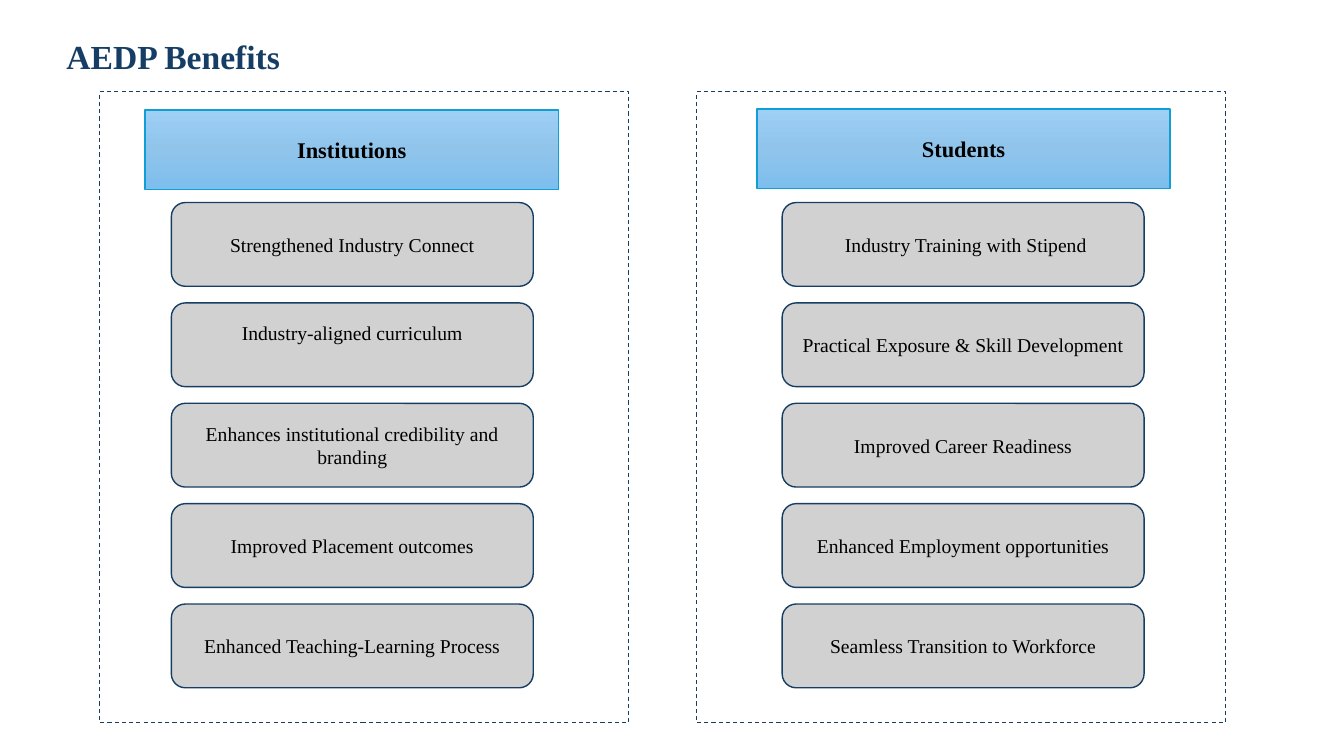
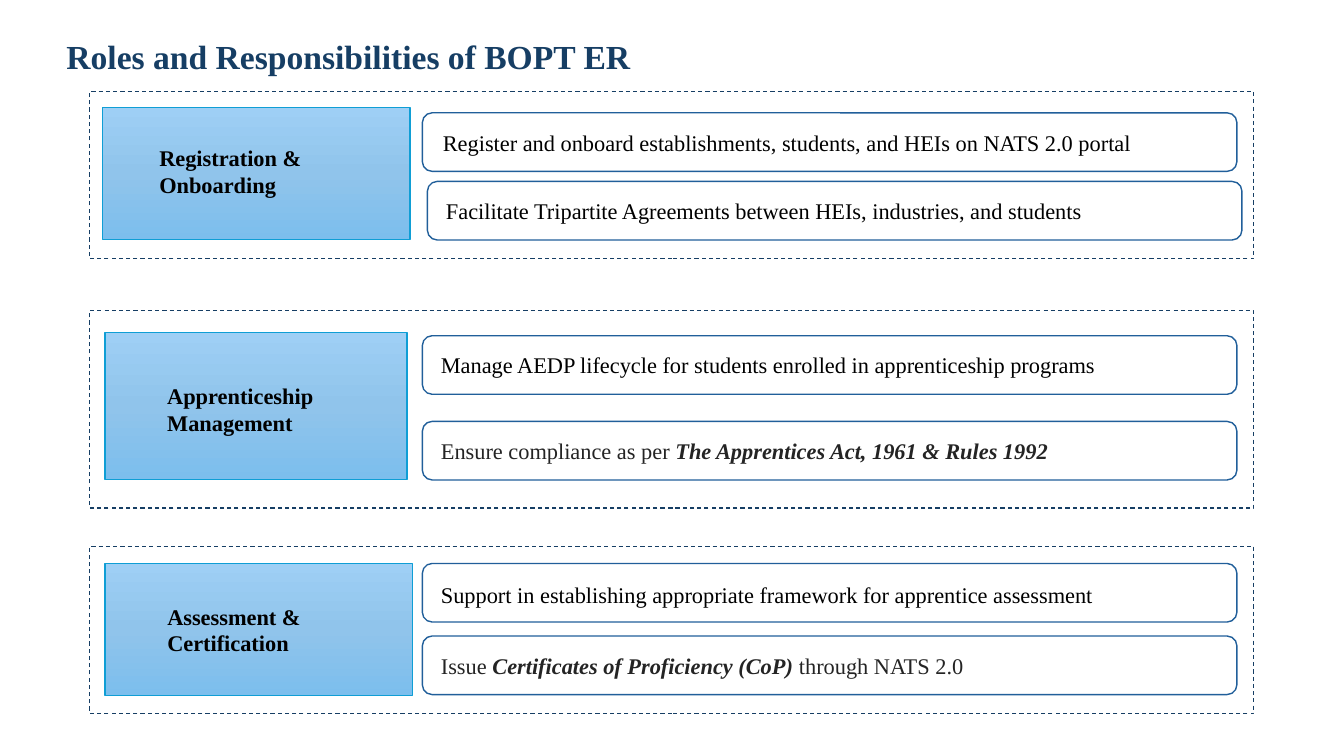
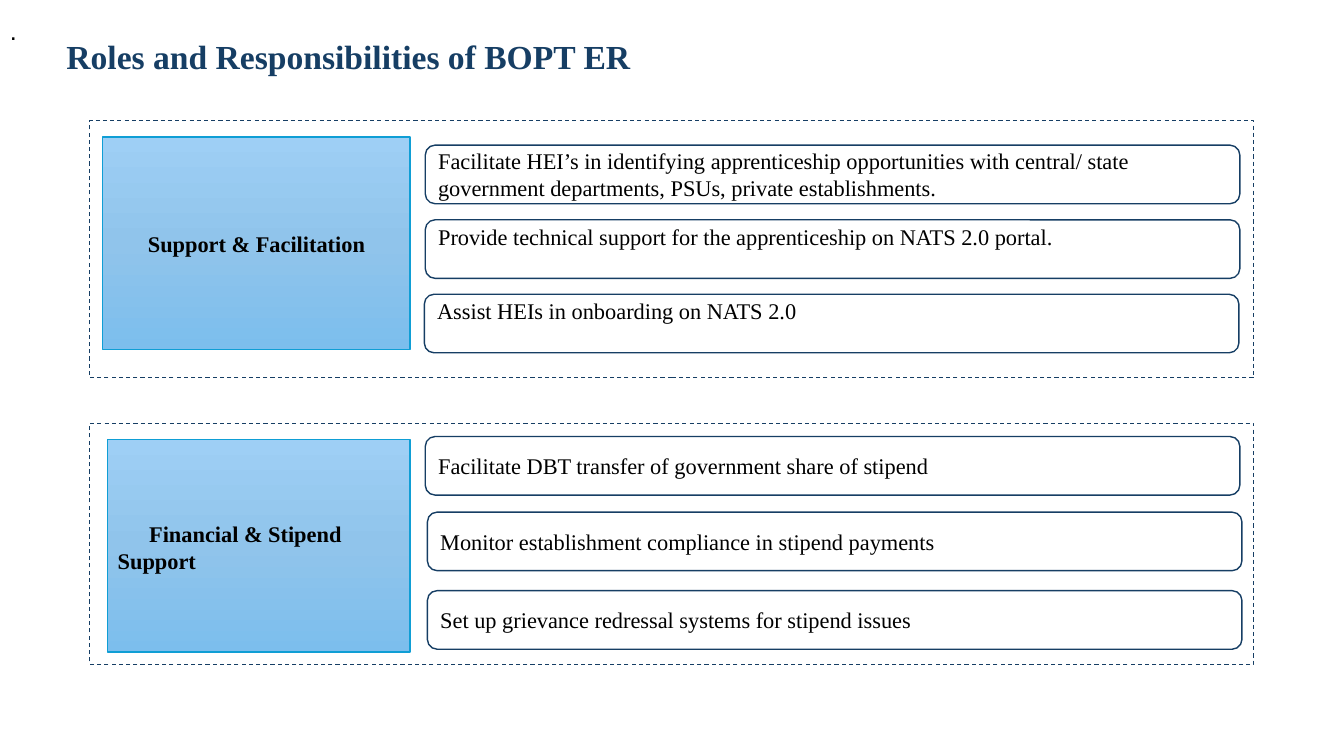
from copy import deepcopy
from dataclasses import dataclass

from pptx import Presentation
from pptx.dml.color import RGBColor
from pptx.enum.dml import MSO_LINE
from pptx.enum.shapes import MSO_SHAPE
from pptx.enum.text import MSO_ANCHOR, PP_ALIGN
from pptx.oxml.ns import qn
from pptx.util import Pt

RECT, ROUNDED = MSO_SHAPE.RECTANGLE, MSO_SHAPE.ROUNDED_RECTANGLE
LEFT, CENTER = PP_ALIGN.LEFT, PP_ALIGN.CENTER
TOP, MIDDLE = MSO_ANCHOR.TOP, MSO_ANCHOR.MIDDLE
DASH = MSO_LINE.DASH

COLORS = {
    "navy": "163E64",
    "blue": "215F9A",
    "cyan": "0F9ED5",
    "card": "D1D1D1",
    "black": "000000",
    "ink": "242424",
}
HEADER_STOPS = ((0, "9ECFF5"), (0.5, "90C4EB"), (1, "7CBEED"))
FONT = "Times New Roman"
INSET_X, INSET_Y = 7.2, 3.6

CARD_W, CARD_H = 258.5, 59.8
CARD_TOP, CARD_PITCH = 144.7, 71.7
ACTION_W, ACTION_H = 581.8, 41.8
PANEL_X, PANEL_W = 64.1, 831.6


@dataclass(frozen=True)
class Box:
    x: float
    y: float
    w: float
    h: float


@dataclass(frozen=True)
class Label:
    """Texts alternate between plain and emphasised; shift moves them down."""
    texts: tuple[str, ...]
    color: str = "black"
    left: float = INSET_X
    right: float = INSET_X
    shift: float = 0
    indent: float = 0
    align: PP_ALIGN = LEFT


@dataclass(frozen=True)
class Column:
    panel: Box
    header: Box
    heading: str
    card_x: float
    cards: tuple[Label, ...]


@dataclass(frozen=True)
class Action:
    x: float
    y: float
    label: Label


@dataclass(frozen=True)
class Section:
    panel_y: float
    panel_h: float
    header: Box
    heading: Label
    actions: tuple[Action, ...]


def card(text: str, **kw) -> Label:
    return Label((text,), align=CENTER, **kw)


def action(x: float, y: float, *texts: str, **kw) -> Action:
    return Action(x, y, Label(texts, **kw))


COLUMNS = (
    Column(Box(71.3, 65.5, 378, 450.7), Box(103.7, 78.5, 295.2, 56.9),
           "Institutions", 122.4, (
               card("Strengthened Industry Connect"),
               card("Industry-aligned curriculum", shift=-8.6),
               card("Enhances institutional credibility and branding"),
               card("Improved Placement outcomes"),
               card("Enhanced Teaching-Learning Process"))),
    Column(Box(497.5, 65.5, 378, 450.7), Box(540.7, 77.8, 295.2, 56.9),
           "Students", 558.7, (
               card("Industry Training with Stipend", left=11),
               card("Practical Exposure & Skill Development"),
               card("Improved Career Readiness"),
               card("Enhanced Employment opportunities"),
               card("Seamless Transition to Workforce"))),
)

ROLES = (
    Section(65.5, 119.5, Box(73.4, 77, 219.6, 94.3),
            Label(("Registration & Onboarding",), left=40.4, right=20, shift=-1.8), (
                action(301.7, 80.6, "Register and onboard establishments, students, "
                       "and HEIs on NATS 2.0 portal", left=12.6),
                action(305.3, 129.6, "Facilitate Tripartite Agreements between HEIs, "
                       "industries, and students", left=11.2))),
    Section(221.8, 141.1, Box(74.9, 237.6, 216, 105.1),
            Label(("Apprenticeship Management",), left=44.6, right=20, shift=2), (
                action(301.7, 239.8, "Manage AEDP lifecycle for students enrolled in "
                       "apprenticeship programs", left=11.2),
                action(301.7, 301, "Ensure compliance as per ",
                       "The Apprentices Act, 1961 & Rules 1992",
                       color="ink", left=11.2))),
    Section(390.2, 119.5, Box(74.9, 402.5, 219.6, 94.3),
            Label(("Assessment & Certification",), left=44.6, right=20), (
                action(301.7, 402.5, "Support in establishing appropriate framework for "
                       "apprentice assessment", left=11.2, shift=1.2),
                action(301.7, 454.3, "Issue ", "Certificates of Proficiency (CoP) ",
                       "through NATS 2.0", color="ink", left=11.2))),
)

SUPPORT_ROLES = (
    Section(86.4, 183.6, Box(73.4, 97.9, 219.6, 151.9),
            Label(("Support & Facilitation",), align=CENTER), (
                action(303.8, 103.7, "Facilitate HEI’s in identifying apprenticeship "
                       "opportunities with central/ state government departments, "
                       "PSUs, private establishments."),
                action(303.8, 157, "Provide technical support for the apprenticeship on "
                       "NATS 2.0 portal.", shift=-9.2),
                action(303.1, 210.2, "Assist HEIs in onboarding on NATS 2.0", shift=-9.2))),
    Section(302.4, 172.1, Box(77, 313.9, 216, 151.9),
            Label(("Financial & Stipend Support",), indent=22.5, shift=1), (
                action(303.8, 311.8, "Facilitate DBT transfer of government share of stipend"),
                action(305.3, 365.8, "Monitor establishment compliance in stipend payments"),
                action(305.3, 421.9, "Set up grievance redressal systems for stipend issues"))),
)


def rgb(name: str) -> RGBColor:
    return RGBColor.from_string(COLORS[name])


def add_run(p, text: str, *, size: float, color: str = "black", font: str = FONT,
            bold: bool = False, italic: bool = False) -> None:
    r = p.add_run()
    r.text = text
    r.font.name, r.font.size = font, Pt(size)
    r.font.bold, r.font.italic = bold, italic
    r.font.color.rgb = rgb(color)


def add_text(slide, box: Box, text: str, *, wrap: bool = True,
             anchor: MSO_ANCHOR = TOP, **kw) -> None:
    sp = slide.shapes.add_textbox(Pt(box.x), Pt(box.y), Pt(box.w), Pt(box.h))
    tf = sp.text_frame
    tf.word_wrap, tf.vertical_anchor = wrap, anchor
    add_run(tf.paragraphs[0], text, **kw)


def add_box(slide, kind: MSO_SHAPE, box: Box, *, line: str, width: float = 1):
    """Add an unfilled, outlined shape."""
    sp = slide.shapes.add_shape(kind, Pt(box.x), Pt(box.y), Pt(box.w), Pt(box.h))
    sp.shadow.inherit = False
    sp.fill.background()
    sp.line.color.rgb = rgb(line)
    sp.line.width = Pt(width)
    return sp


def write_label(sp, label: Label, *, size: float, bold: bool = False) -> None:
    tf = sp.text_frame
    tf.word_wrap, tf.vertical_anchor = True, MIDDLE
    tf.margin_left, tf.margin_right = Pt(label.left), Pt(label.right)
    tf.margin_top = Pt(INSET_Y + 2 * max(label.shift, 0))
    tf.margin_bottom = Pt(INSET_Y + 2 * max(-label.shift, 0))
    p = tf.paragraphs[0]
    p.alignment = label.align
    if label.indent:
        p._p.get_or_add_pPr().set("indent", str(Pt(label.indent)))
    for i, text in enumerate(label.texts):
        emphasis = i % 2 == 1
        add_run(p, text, size=size, color=label.color,
                bold=bold or emphasis, italic=emphasis)


def add_panel(slide, box: Box) -> None:
    sp = add_box(slide, RECT, box, line="navy", width=0.75)
    sp.line.dash_style = DASH


def add_header(slide, box: Box, label: Label) -> None:
    sp = add_box(slide, RECT, box, line="cyan")
    sp.fill.gradient()
    sp.fill.gradient_angle = 270
    first = sp._element.spPr.find(".//" + qn("a:gs"))
    first.addnext(deepcopy(first))
    for stop, (position, color) in zip(sp.fill.gradient_stops, HEADER_STOPS):
        stop.position = position
        stop.color.rgb = RGBColor.from_string(color)
    write_label(sp, label, size=16, bold=True)


def add_column(slide, column: Column) -> None:
    add_panel(slide, column.panel)
    add_header(slide, column.header, Label((column.heading,), align=CENTER))
    for i, label in enumerate(column.cards):
        box = Box(column.card_x, CARD_TOP + i * CARD_PITCH, CARD_W, CARD_H)
        sp = add_box(slide, ROUNDED, box, line="navy")
        sp.fill.solid()
        sp.fill.fore_color.rgb = rgb("card")
        write_label(sp, label, size=14)


def add_section(slide, section: Section, *, line: str) -> None:
    add_panel(slide, Box(PANEL_X, section.panel_y, PANEL_W, section.panel_h))
    add_header(slide, section.header, section.heading)
    for item in section.actions:
        sp = add_box(slide, ROUNDED, Box(item.x, item.y, ACTION_W, ACTION_H), line=line)
        write_label(sp, item.label, size=16)


def add_slide(prs, title: str):
    slide = prs.slides.add_slide(prs.slide_layouts[6])
    add_text(slide, Box(40.3, 22.3, 617.8, 36), title, size=24, color="navy", bold=True)
    return slide


def main() -> None:
    prs = Presentation()
    prs.slide_width, prs.slide_height = Pt(960), Pt(540)

    benefits = add_slide(prs, "AEDP Benefits")
    for column in COLUMNS:
        add_column(benefits, column)

    for sections, line in ((ROLES, "blue"), (SUPPORT_ROLES, "navy")):
        slide = add_slide(prs, "Roles and Responsibilities of BOPT ER")
        for section in sections:
            add_section(slide, section, line=line)
    add_text(slide, Box(0, 7.2, 19.4, 28.8), ".", wrap=False, anchor=MIDDLE,
             size=18, font="Arial")

    prs.save("out.pptx")


if __name__ == "__main__":
    main()
